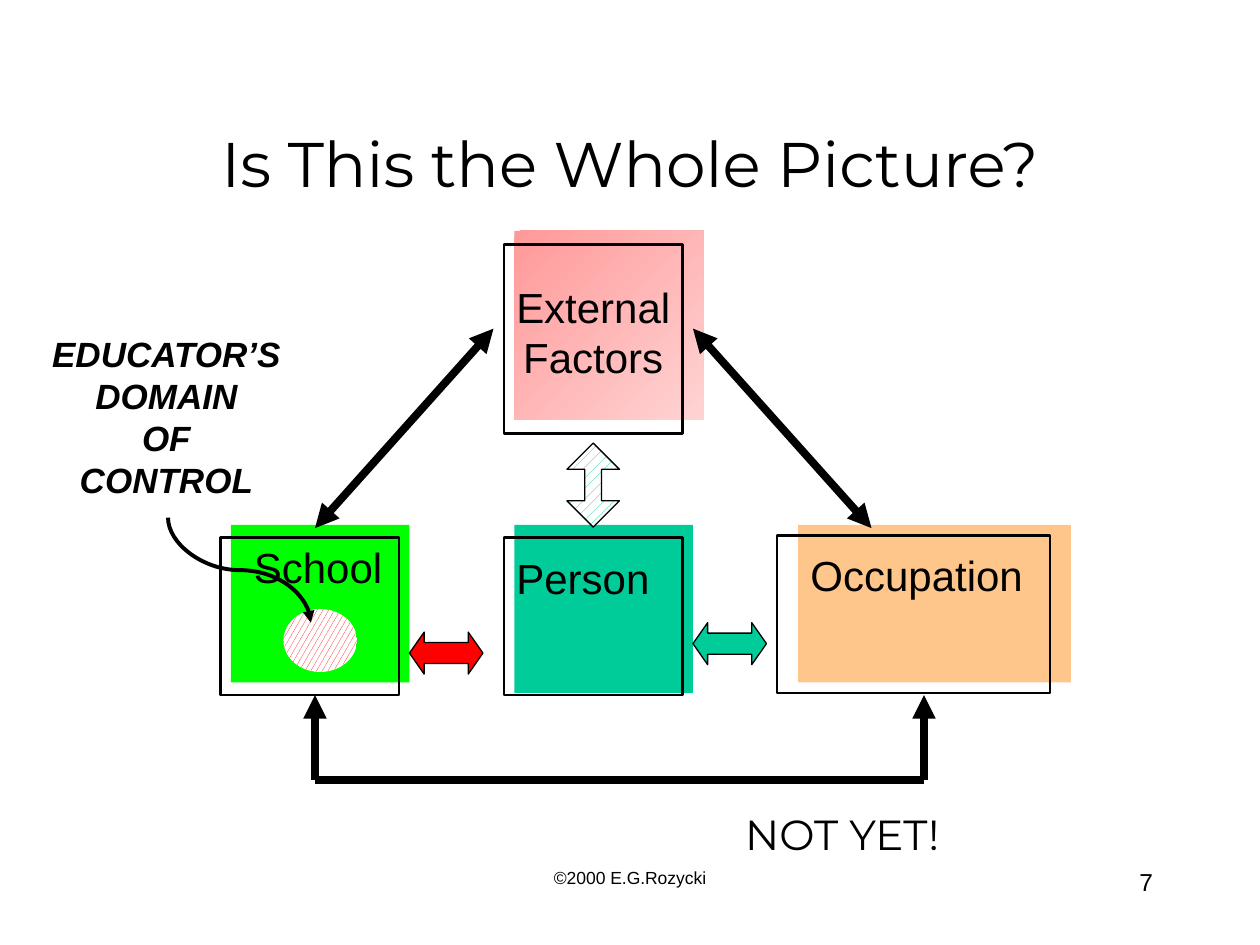
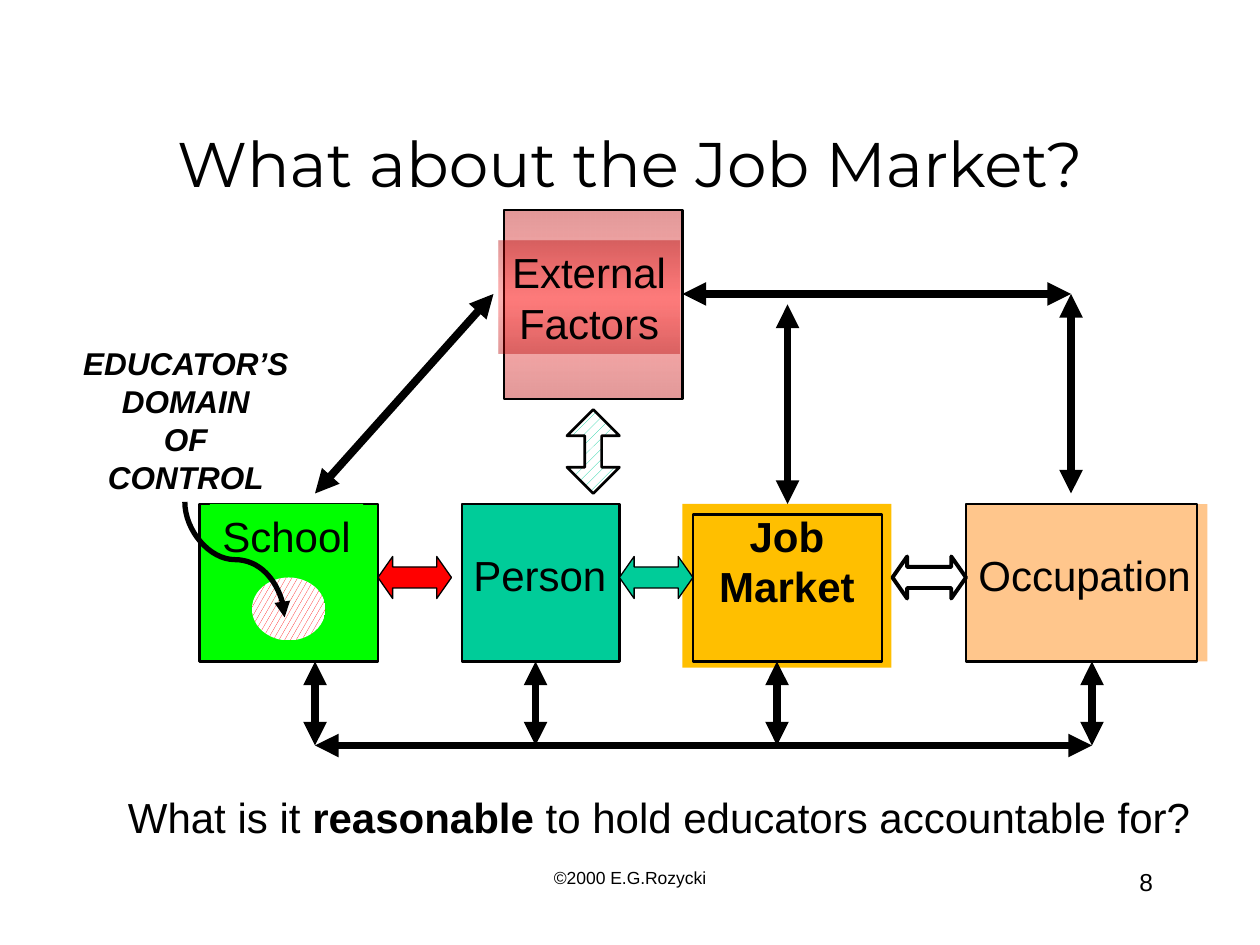
"""Build two slides on school, person, job market and occupation."""
from dataclasses import dataclass
from typing import Optional, Union

import lxml.etree
import pptx
import pptx.dml.color
import pptx.enum.dml
import pptx.enum.shapes
import pptx.enum.text
import pptx.oxml.ns
import pptx.util

RGB = pptx.dml.color.RGBColor
Geometry = pptx.enum.shapes.MSO_SHAPE
Align = pptx.enum.text.PP_ALIGN
Anchor = pptx.enum.text.MSO_ANCHOR
Hatch = pptx.enum.dml.MSO_PATTERN
qn = pptx.oxml.ns.qn

EMU_PER_PX = 914400 // 120
WIDTH, HEIGHT = 1200, 900

BLACK = RGB(0x00, 0x00, 0x00)
WHITE = RGB(0xFF, 0xFF, 0xFF)
RED = RGB(0xFF, 0x00, 0x00)
DARK_RED = RGB(0xB6, 0x00, 0x00)
PINK = RGB(0xFF, 0x94, 0x94)
GREEN = RGB(0x00, 0xFF, 0x00)
TEAL = RGB(0x00, 0xCC, 0x99)
PEACH = RGB(0xFF, 0xC6, 0x8C)
AMBER = RGB(0xFF, 0xBF, 0x00)

BODY_FONT, TITLE_FONT = "Arial", "Montserrat"
FRAME_PT, LINK_PT = 1.5, 4.5


@dataclass(frozen=True)
class Pattern:
    kind: Hatch
    color: RGB


@dataclass(frozen=True)
class Stop:
    percent: int
    color: RGB
    alpha: int


@dataclass(frozen=True)
class Gradient:
    angle: int
    stops: tuple[Stop, ...]


Fill = Optional[Union[RGB, Pattern, Gradient]]


@dataclass(frozen=True)
class Box:
    x: int
    y: int
    w: int
    h: int
    fill: Fill = None
    line: float = 0
    geometry: Geometry = Geometry.RECTANGLE
    adjustments: tuple[float, ...] = ()


@dataclass(frozen=True)
class Label:
    x: int
    y: int
    w: int
    h: int
    text: str
    size: int = 24
    font: str = BODY_FONT
    align: Align = Align.LEFT
    anchor: Anchor = Anchor.TOP
    bold: bool = False
    italic: bool = False
    wrap: bool = False
    fill: Fill = None
    emphasis: str = ""


@dataclass(frozen=True)
class Link:
    x1: int
    y1: int
    x2: int
    y2: int
    head: bool = True
    tail: bool = True
    width: float = LINK_PT
    curved: bool = False


Item = Union[Box, Label, Link]

HAZE = Gradient(45, (Stop(0, RED, 40), Stop(100, PINK, 40)))
GLOW = Gradient(90, (Stop(0, DARK_RED, 40), Stop(50, RED, 30), Stop(100, DARK_RED, 40)))


def px(value: float) -> pptx.util.Emu:
    return pptx.util.Emu(round(value * EMU_PER_PX))


def set_gradient(sp, gradient: Gradient) -> None:
    sp.fill.background()
    old = sp._element.spPr.find(qn("a:noFill"))
    grad = lxml.etree.Element(qn("a:gradFill"), rotWithShape="1")
    stops = lxml.etree.SubElement(grad, qn("a:gsLst"))
    for stop in gradient.stops:
        gs = lxml.etree.SubElement(stops, qn("a:gs"), pos=str(stop.percent * 1000))
        color = lxml.etree.SubElement(gs, qn("a:srgbClr"), val=str(stop.color))
        lxml.etree.SubElement(color, qn("a:alpha"), val=str(stop.alpha * 1000))
    lxml.etree.SubElement(grad, qn("a:lin"), ang=str(gradient.angle * 60000), scaled="1")
    old.getparent().replace(old, grad)


def set_fill(sp, fill: Fill) -> None:
    if fill is None:
        sp.fill.background()
    elif isinstance(fill, Gradient):
        set_gradient(sp, fill)
    elif isinstance(fill, Pattern):
        sp.fill.patterned()
        sp.fill.pattern = fill.kind
        sp.fill.fore_color.rgb = fill.color
        sp.fill.back_color.rgb = WHITE
    else:
        sp.fill.solid()
        sp.fill.fore_color.rgb = fill


def draw_box(s, box: Box) -> None:
    sp = s.shapes.add_shape(box.geometry, px(box.x), px(box.y), px(box.w), px(box.h))
    sp.shadow.inherit = False
    for i, value in enumerate(box.adjustments):
        sp.adjustments[i] = value
    set_fill(sp, box.fill)
    if box.line:
        sp.line.color.rgb = BLACK
        sp.line.width = pptx.util.Pt(box.line)
    else:
        sp.line.fill.background()


def draw_label(s, label: Label) -> None:
    sp = s.shapes.add_textbox(px(label.x), px(label.y), px(label.w), px(label.h))
    set_fill(sp, label.fill)
    tf = sp.text_frame
    tf.word_wrap = label.wrap
    tf.vertical_anchor = label.anchor
    if label.emphasis:
        before, word, after = label.text.partition(label.emphasis)
        tf.text = before
        for part in (word, after):
            tf.paragraphs[0].add_run().text = part
    else:
        tf.text = label.text
    for p in tf.paragraphs:
        p.alignment = label.align
        for r in p.runs:
            r.font.name = label.font
            r.font.size = pptx.util.Pt(label.size)
            r.font.bold = label.bold or r.text == label.emphasis
            r.font.italic = label.italic
            r.font.color.rgb = BLACK


def draw_link(s, link: Link) -> None:
    kind = pptx.enum.shapes.MSO_CONNECTOR.STRAIGHT
    ends = (link.x1, link.y1, link.x2, link.y2)
    if link.curved:
        kind = pptx.enum.shapes.MSO_CONNECTOR.CURVE
        cx, cy = (link.x1 + link.x2) / 2, (link.y1 + link.y2) / 2
        dx, dy = (link.x2 - link.x1) / 2, (link.y2 - link.y1) / 2
        ends = (cx + dy, cy - dx, cx - dy, cy + dx)
    sp = s.shapes.add_connector(kind, *map(px, ends))
    sp.line.color.rgb = BLACK
    sp.line.width = pptx.util.Pt(link.width)
    props = sp._element.spPr
    if link.curved:
        props.find(qn("a:xfrm")).set("rot", str(270 * 60000))
    for shown, tag in ((link.head, "a:headEnd"), (link.tail, "a:tailEnd")):
        if shown:
            lxml.etree.SubElement(props.find(qn("a:ln")), qn(tag), type="triangle")
    lxml.etree.SubElement(props, qn("a:effectLst"))


def side_arrow(x: int, y: int, fill: Fill, line: float = 0.75) -> Box:
    return Box(x, y, 70, 40, fill, line, Geometry.LEFT_RIGHT_ARROW, (0.5, 0.35))


def factor_arrow(y: int, line: float) -> Box:
    hatch = Pattern(Hatch.DASHED_UPWARD_DIAGONAL, TEAL)
    return Box(540, y, 50, 80, hatch, line, Geometry.UP_DOWN_ARROW, (0.5, 0.32))


def control_spot(x: int, y: int) -> Box:
    return Box(x, y, 70, 60, Pattern(Hatch.LARGE_CONFETTI, RED), geometry=Geometry.OVAL)


def control_label(x: int, y: int, w: int, h: int, size: int) -> Label:
    return Label(x, y, w, h, "EDUCATOR’S\nDOMAIN\vOF\vCONTROL", size,
                 align=Align.CENTER, bold=True, italic=True)


def control_curve(x1: int, y1: int, x2: int, y2: int, width: float) -> Link:
    return Link(x1, y1, x2, y2, head=False, width=width, curved=True)


def factors_label(x: int, y: int, fill: Fill = None) -> Label:
    return Label(x, y, 172, 108, "External\nFactors", align=Align.CENTER, fill=fill)


def whole_picture() -> list[Item]:
    frames = [Box(x, y, w, h, line=FRAME_PT) for x, y, w, h in (
        (480, 233, 170, 180), (210, 512, 170, 150),
        (480, 512, 170, 150), (740, 510, 260, 150))]
    risers = [Link(x, 743, x, 662, head=False) for x in (300, 880)]
    return [
        Box(490, 220, 180, 180, HAZE),
        Box(220, 500, 170, 150, GREEN),
        Box(490, 500, 170, 160, TEAL),
        Box(760, 500, 260, 150, PEACH),
        *frames,
        factors_label(479, 262),
        Label(230, 510, 146, 60, "School"),
        Label(480, 520, 151, 60, "Person"),
        Label(760, 517, 227, 60, "Occupation"),
        side_arrow(390, 602, RED),
        side_arrow(660, 593, TEAL),
        factor_arrow(422, 0.75),
        Link(300, 743, 880, 743, head=False, tail=False),
        *risers,
        Link(470, 313, 300, 503),
        Link(660, 313, 830, 503),
        control_label(36, 311, 245, 172, 20),
        Label(698, 764, 235, 68, "NOT YET!", font=TITLE_FONT),
        control_spot(270, 580),
        control_curve(160, 493, 296, 593, 2.25),
    ]


def job_market() -> list[Item]:
    risers = [Link(x, 710, x, 630) for x in (300, 510, 740, 1040)]
    return [
        Box(190, 480, 170, 150, GREEN, FRAME_PT),
        Label(200, 480, 146, 60, "School", fill=GREEN),
        Label(650, 480, 199, 156, "Job\nMarket", align=Align.CENTER,
              bold=True, wrap=True, fill=AMBER),
        Box(920, 480, 230, 150, PEACH),
        Box(440, 480, 150, 150, TEAL, FRAME_PT),
        Box(480, 200, 170, 180, GLOW, FRAME_PT),
        factors_label(475, 229, GLOW),
        Label(439, 517, 151, 60, "Person"),
        Box(920, 480, 220, 150, line=FRAME_PT),
        Label(920, 517, 227, 60, "Occupation"),
        side_arrow(360, 530, RED),
        side_arrow(590, 530, TEAL),
        factor_arrow(390, 1.5),
        Link(300, 710, 1040, 710),
        Link(470, 280, 300, 470),
        control_label(66, 322, 222, 156, 18),
        side_arrow(850, 530, None, 2.25),
        Box(660, 490, 180, 140, line=FRAME_PT),
        *risers,
        Link(750, 480, 750, 290),
        Link(650, 280, 1020, 280),
        Link(1020, 470, 1020, 280),
        control_spot(240, 550),
        Label(110, 748, 1036, 60, "What is it reasonable to hold educators accountable for?",
              emphasis="reasonable"),
        control_curve(176, 478, 271, 588, 3),
    ]


def add_slide(prs, number: int, title: str, items: list[Item]) -> None:
    s = prs.slides.add_slide(prs.slide_layouts[6])
    shared = [
        Label(410, 820, 380, 60, "©2000 E.G.Rozycki", 10, align=Align.CENTER, wrap=True),
        Label(860, 820, 250, 60, str(number), 14, align=Align.RIGHT, wrap=True),
        Label(90, 80, 1020, 150, title, 36, TITLE_FONT, Align.CENTER, Anchor.MIDDLE, wrap=True),
    ]
    draw = {Box: draw_box, Label: draw_label, Link: draw_link}
    for item in shared + items:
        draw[type(item)](s, item)


def main() -> None:
    prs = pptx.Presentation()
    prs.slide_width, prs.slide_height = px(WIDTH), px(HEIGHT)
    add_slide(prs, 7, "Is This the Whole Picture?", whole_picture())
    add_slide(prs, 8, "What about the Job Market?", job_market())
    prs.save("out.pptx")


if __name__ == "__main__":
    main()
